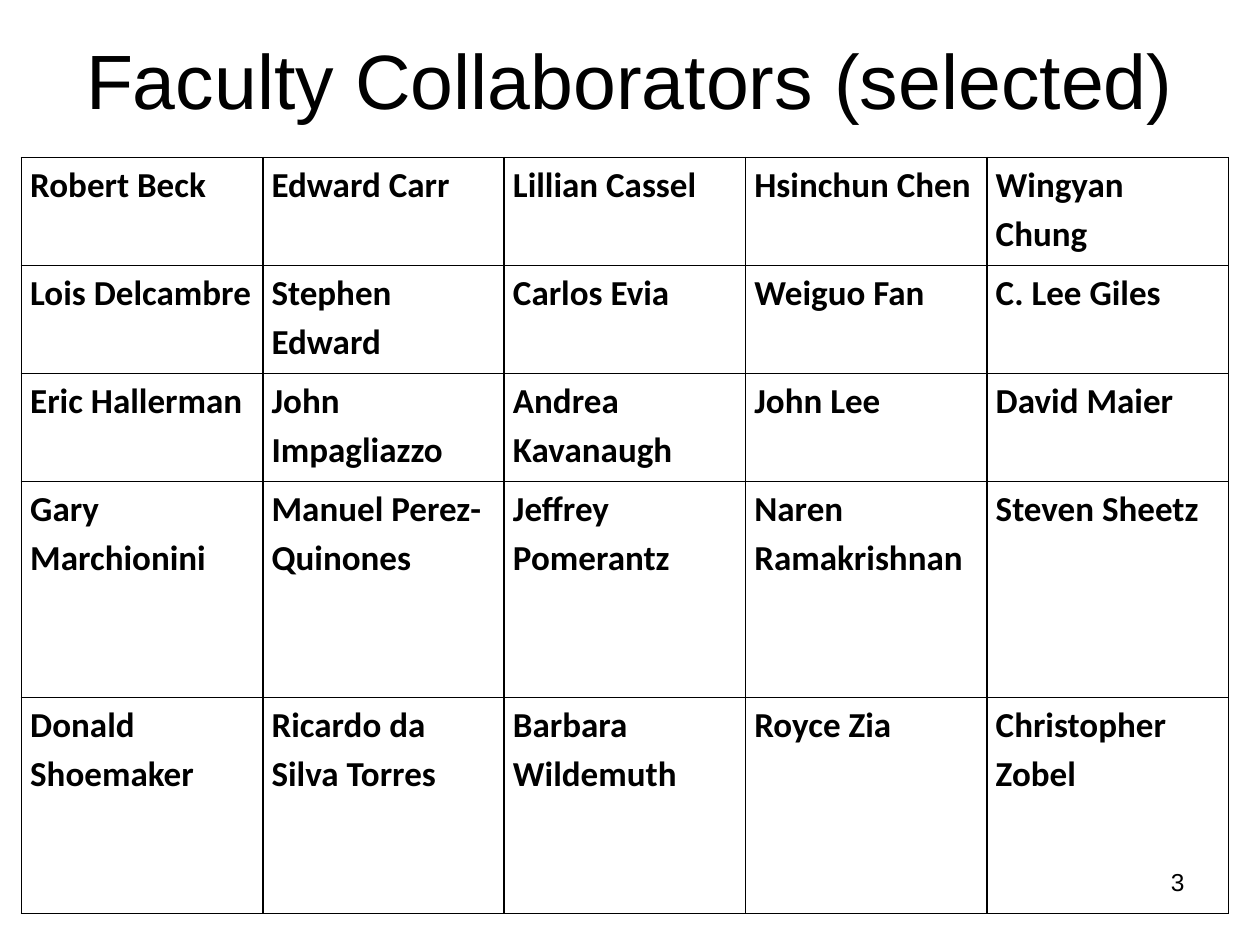
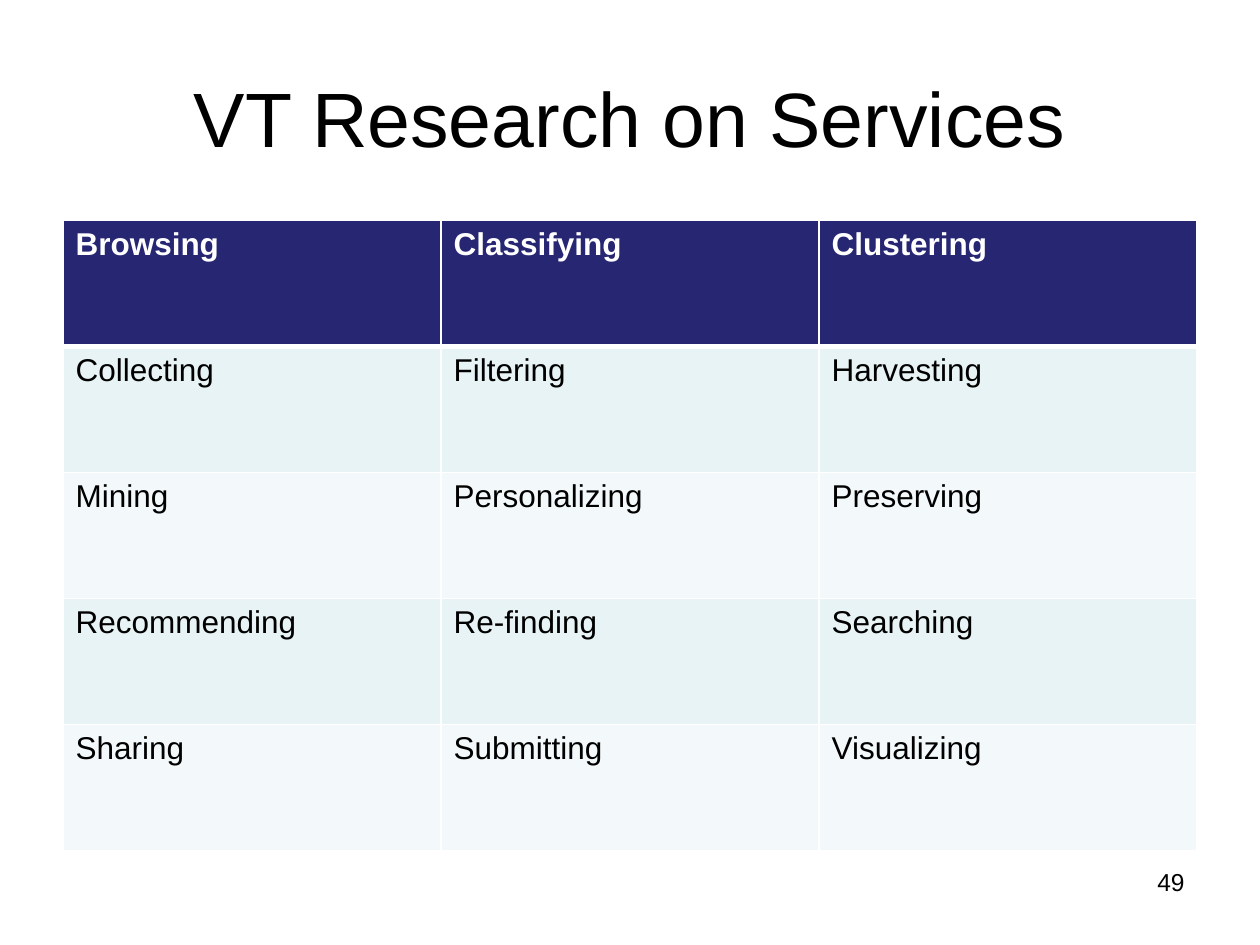
from dataclasses import dataclass
from typing import Optional

from lxml import etree
from pptx import Presentation
from pptx.dml.color import RGBColor
from pptx.enum import text
from pptx.oxml import ns
from pptx.util import Inches, Pt

BLACK = RGBColor(0x00, 0x00, 0x00)
WHITE = RGBColor(0xFF, 0xFF, 0xFF)
NAVY = RGBColor(0x26, 0x26, 0x73)
PALE_TEAL = RGBColor(0xE7, 0xF3, 0xF4)
PALER_TEAL = RGBColor(0xF3, 0xF9, 0xFA)

TITLE_FONT = {"name": "Arial", "size": Pt(44), "bold": False}
NUMBER_FONT = {"name": "Arial", "size": Pt(14)}
NAME_FONT = {"name": "Calibri", "size": Pt(20), "bold": True}
SERVICE_FONT = {"name": "Arial", "size": Pt(18), "bold": False}
HEADER_FONT = SERVICE_FONT | {"bold": True}
NAME_MARGINS = {
    "margin_left": Inches(0.07),
    "margin_right": Inches(0.07),
    "margin_top": 0,
    "margin_bottom": 0,
}

COLLABORATORS = [
    ["Robert Beck", "Edward Carr", "Lillian Cassel", "Hsinchun Chen", "Wingyan Chung"],
    ["Lois Delcambre", "Stephen Edward", "Carlos Evia", "Weiguo Fan", "C. Lee Giles"],
    ["Eric Hallerman", "John Impagliazzo", "Andrea Kavanaugh", "John Lee", "David Maier"],
    ["Gary Marchionini", "Manuel Perez-Quinones", "Jeffrey Pomerantz",
     "Naren Ramakrishnan", "Steven Sheetz"],
    ["Donald Shoemaker", "Ricardo da Silva Torres", "Barbara Wildemuth",
     "Royce Zia", "Christopher Zobel"],
]
SERVICES = [
    ["Browsing", "Classifying", "Clustering"],
    ["Collecting", "Filtering", "Harvesting"],
    ["Mining", "Personalizing", "Preserving"],
    ["Recommending", "Re-finding", "Searching"],
    ["Sharing", "Submitting", "Visualizing"],
]


@dataclass
class RowStyle:
    height: float
    font: dict
    color: RGBColor = BLACK
    fill: Optional[RGBColor] = None
    top_line: float = 1
    bottom_line: float = 1


@dataclass
class TableSpec:
    left: float
    top: float
    width: float
    rows: list[list[str]]
    styles: list[RowStyle]
    border: RGBColor
    margins: dict
    line_spacing: float = 1.0


@dataclass
class SlideSpec:
    title: str
    title_top: float
    number: str
    table: TableSpec


def apply_format(target, values: dict) -> None:
    for name, value in values.items():
        setattr(target, name, value)


def write(paragraph, words: str, font: dict, color: RGBColor) -> None:
    run = paragraph.add_run()
    run.text = words
    apply_format(run.font, font)
    run.font.color.rgb = color


def set_borders(cell, color: RGBColor, top: float, bottom: float) -> None:
    properties = cell._tc.get_or_add_tcPr()
    for side, width in {"lnL": 1, "lnR": 1, "lnT": top, "lnB": bottom}.items():
        line = etree.SubElement(properties, ns.qn(f"a:{side}"), w=str(Pt(width)))
        solid = etree.SubElement(line, ns.qn("a:solidFill"))
        etree.SubElement(solid, ns.qn("a:srgbClr"), val=str(color))


def add_title(slide, words: str, top: float) -> None:
    title = slide.shapes.title
    apply_format(title, {"left": Inches(0.5), "top": Inches(top),
                         "width": Inches(9), "height": Inches(1.25)})
    apply_format(title.text_frame, {"vertical_anchor": text.MSO_ANCHOR.MIDDLE,
                                    "auto_size": text.MSO_AUTO_SIZE.NONE,
                                    "word_wrap": True})
    paragraph = title.text_frame.paragraphs[0]
    paragraph.alignment = text.PP_ALIGN.CENTER
    write(paragraph, words, TITLE_FONT, BLACK)


def add_number(slide, number: str) -> None:
    box = slide.shapes.add_textbox(Inches(7.17), Inches(6.83), Inches(2.33), Inches(0.52))
    box.text_frame.word_wrap = True
    paragraph = box.text_frame.paragraphs[0]
    paragraph.alignment = text.PP_ALIGN.RIGHT
    write(paragraph, number, NUMBER_FONT, BLACK)


def add_table(slide, spec: TableSpec) -> None:
    column_count = len(spec.rows[0])
    height = sum(style.height for style in spec.styles)
    table = slide.shapes.add_table(
        len(spec.rows), column_count, Inches(spec.left), Inches(spec.top),
        Inches(spec.width), Inches(height)).table
    apply_format(table, {"first_row": False, "horz_banding": False})
    for column in table.columns:
        column.width = Inches(spec.width / column_count)
    for row, words, style in zip(table.rows, spec.rows, spec.styles):
        row.height = Inches(style.height)
        for cell, word in zip(row.cells, words):
            apply_format(cell, spec.margins)
            set_borders(cell, spec.border, style.top_line, style.bottom_line)
            if style.fill is None:
                cell.fill.background()
            else:
                cell.fill.solid()
                cell.fill.fore_color.rgb = style.fill
            paragraph = cell.text_frame.paragraphs[0]
            paragraph.line_spacing = spec.line_spacing
            write(paragraph, word, style.font, style.color)


def add_slide(presentation, spec: SlideSpec) -> None:
    slide = presentation.slides.add_slide(presentation.slide_layouts[5])
    add_title(slide, spec.title, spec.title_top)
    add_table(slide, spec.table)
    add_number(slide, spec.number)


def main() -> None:
    short_row = RowStyle(6 / 7, NAME_FONT)
    tall_row = RowStyle(12 / 7, NAME_FONT)
    collaborators = TableSpec(0.17, 1.25, 9.58, COLLABORATORS,
                              [short_row] * 3 + [tall_row] * 2, BLACK, NAME_MARGINS, 1.15)

    header = RowStyle(1, HEADER_FONT, WHITE, NAVY, bottom_line=3)
    first_band = RowStyle(1, SERVICE_FONT, fill=PALE_TEAL, top_line=3)
    dark_band = RowStyle(1, SERVICE_FONT, fill=PALE_TEAL)
    light_band = RowStyle(1, SERVICE_FONT, fill=PALER_TEAL)
    services = TableSpec(0.5, 1.75, 9, SERVICES,
                         [header, first_band, light_band, dark_band, light_band], WHITE, {})

    presentation = Presentation()
    apply_format(presentation, {"slide_width": Inches(10), "slide_height": Inches(7.5)})
    for spec in (
        SlideSpec("Faculty Collaborators (selected)", 0, "3", collaborators),
        SlideSpec("VT Research on Services", 0.3, "49", services),
    ):
        add_slide(presentation, spec)
    presentation.save("out.pptx")


if __name__ == "__main__":
    main()
